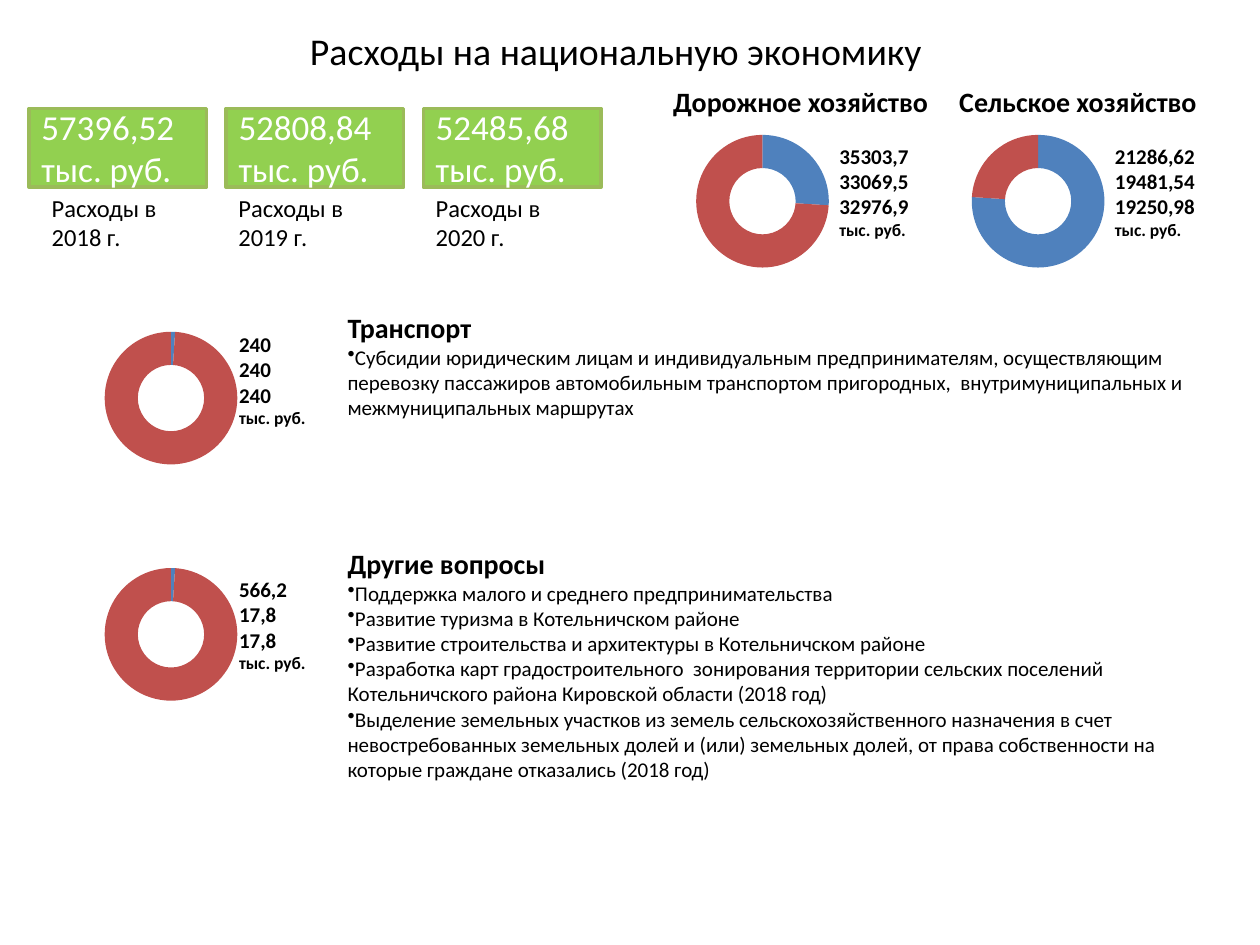
from lxml import etree
from pptx import Presentation
from pptx.chart.data import CategoryChartData
from pptx.dml.color import RGBColor
from pptx.enum.chart import XL_CHART_TYPE
from pptx.enum.shapes import MSO_SHAPE
from pptx.enum.text import MSO_ANCHOR, MSO_AUTO_SIZE, PP_ALIGN
from pptx.oxml import parse_xml
from pptx.oxml.ns import nsdecls, qn
from pptx.util import Pt

RING = XL_CHART_TYPE.DOUGHNUT
RECT = MSO_SHAPE.RECTANGLE
TOP, MID = MSO_ANCHOR.TOP, MSO_ANCHOR.MIDDLE
GROW, FIXED = MSO_AUTO_SIZE.SHAPE_TO_FIT_TEXT, MSO_AUTO_SIZE.NONE
LEFT, CENTER = PP_ALIGN.LEFT, PP_ALIGN.CENTER

BLACK = RGBColor(0x00, 0x00, 0x00)
WHITE = RGBColor(0xFF, 0xFF, 0xFF)
BLUE = RGBColor(0x4F, 0x81, 0xBD)
RED = RGBColor(0xC0, 0x50, 0x4D)
GREEN = RGBColor(0x92, 0xD0, 0x50)
OLIVE = RGBColor(0x9B, 0xBB, 0x59)

UNIT = "тыс. руб."
STEP = 112.7
SUMS = [("2018", "57396,52"), ("2019", "52808,84"), ("2020", "52485,68")]
RINGS = [
    (382.5, 67.5, 26, 472.5, 78.5, ["35303,7", "33069,5", "32976,9"]),
    (540, 67.5, 76, 630, 78.5, ["21286,62", "19481,54", "19250,98"]),
    (44.5, 180, 1, 129.5, 186, ["240", "240", "240"]),
    (44.5, 315, 1, 129.5, 326, ["566,2", "17,8", "17,8"]),
]
HEADS = [(376.5, 162, "Дорожное хозяйство"), (540, 152, "Сельское хозяйство")]
NOTES = [
    (186, 45.5, "Транспорт", [
        "Субсидии юридическим лицам и индивидуальным предпринимателям, "
        "осуществляющим перевозку пассажиров автомобильным транспортом "
        "пригородных,  внутримуниципальных и межмуниципальных маршрутах",
    ]),
    (320.5, 118, "Другие вопросы", [
        "Поддержка малого и среднего предпринимательства",
        "Развитие туризма в Котельничском районе",
        "Развитие строительства и архитектуры в Котельничском районе",
        "Разработка карт градостроительного  зонирования территории сельских "
        "поселений Котельничского района Кировской области (2018 год)",
        "Выделение земельных участков из земель сельскохозяйственного "
        "назначения в счет невостребованных земельных долей и (или) земельных "
        "долей, от права собственности на которые граждане отказались "
        "(2018 год)",
    ]),
]


class Deck:
    font = "Calibri"

    def __init__(self, wide, high):
        self.prs = Presentation()
        self.prs.slide_width = Pt(wide)
        self.prs.slide_height = Pt(high)
        self.slide = self.prs.slides.add_slide(self.prs.slide_layouts[6])

    def lay(self, frame, lines, color=BLACK, align=LEFT):
        for num, (words, size, bold, mark) in enumerate(lines):
            para = frame.paragraphs[0] if num == 0 else frame.add_paragraph()
            para.alignment = align
            if mark:
                props = para._p.get_or_add_pPr()
                etree.SubElement(props, qn("a:buChar")).set("char", "•")
            run = para.add_run()
            run.text = words
            run.font.name = self.font
            run.font.size = Pt(size)
            run.font.bold = bold
            run.font.color.rgb = color

    def text(self, box, lines, align=LEFT, anchor=TOP, wrap=True, fit=GROW):
        frame = self.slide.shapes.add_textbox(*map(Pt, box)).text_frame
        frame.word_wrap = wrap
        frame.auto_size = fit
        frame.vertical_anchor = anchor
        self.lay(frame, lines, align=align)

    def card(self, box, lines):
        shape = self.slide.shapes.add_shape(RECT, *map(Pt, box))
        shape.shadow.inherit = False
        shape.fill.solid()
        shape.fill.fore_color.rgb = GREEN
        shape.line.color.rgb = OLIVE
        shape.line.width = Pt(2)
        shape.text_frame.vertical_anchor = MID
        self.lay(shape.text_frame, lines, WHITE)

    def ring(self, box, share):
        data = CategoryChartData()
        data.categories = ["1", "2"]
        data.add_series("Series 1", [share, 100 - share])
        chart = self.slide.shapes.add_chart(RING, *map(Pt, box), data).chart
        chart.has_legend = False
        chart.has_title = False
        chart.font.name = self.font
        chart.font.size = Pt(18)
        chart.font.color.rgb = BLACK
        plot = chart.plots[0]
        plot.vary_by_categories = True
        plot.has_data_labels = False
        for num, color in enumerate((BLUE, RED)):
            fill = plot.series[0].points[num].format.fill
            fill.solid()
            fill.fore_color.rgb = color
        node = plot._element
        node.find(qn("c:holeSize")).set("val", "50")
        area = node.getparent()
        for old in area.findall(qn("c:layout")):
            area.remove(old)
        area.insert(0, parse_xml(
            f'<c:layout {nsdecls("c")}><c:manualLayout>'
            '<c:layoutTarget val="inner"/>'
            '<c:xMode val="edge"/><c:yMode val="edge"/>'
            '<c:x val="0.14"/><c:y val="0.1"/>'
            '<c:w val="0.72"/><c:h val="0.79"/>'
            '</c:manualLayout></c:layout>'))


def main():
    deck = Deck(720, 540)
    deck.text((28, 11.5, 648, 34.5),
              [("Расходы на национальную экономику", 21.6, False, False)],
              CENTER, MID, fit=FIXED)
    for left, top, share, side, head, sums in RINGS:
        deck.ring((left, top, 106.5, 96), share)
        lines = [(num, 12, True, False) for num in sums]
        deck.text((side, head, 67.5, 65.5), lines + [(UNIT, 10, True, False)])
    for left, wide, words in HEADS:
        deck.text((left, 44.5, wide, 26.5), [(words, 16, True, False)],
                  CENTER, wrap=False)
    for top, high, head, items in NOTES:
        lines = [(item, 12, False, True) for item in items]
        deck.text((191.5, top, 495, high), [(head, 16, True, False)] + lines,
                  anchor=MID, fit=FIXED)
    for num, (year, total) in enumerate(SUMS):
        left = 16.5 + num * STEP
        deck.card((left, 62, 101.5, 45),
                  [(total, 20, False, False), (UNIT, 20, False, False)])
        deck.text((left if num else 22.5, 106.5, 75, 41),
                  [("Расходы в", 14, False, False),
                   (f"{year} г.", 14, False, False)], wrap=False)
    deck.prs.save("out.pptx")


if __name__ == "__main__":
    main()
